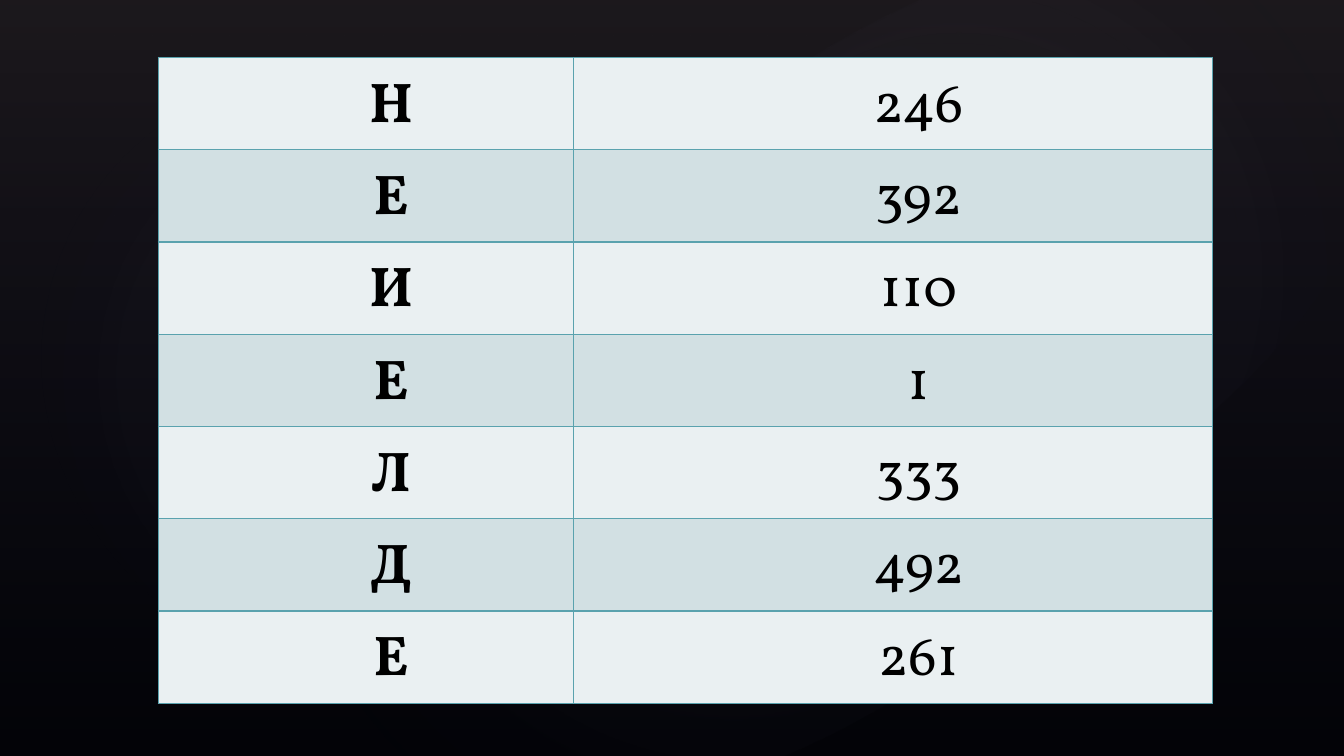
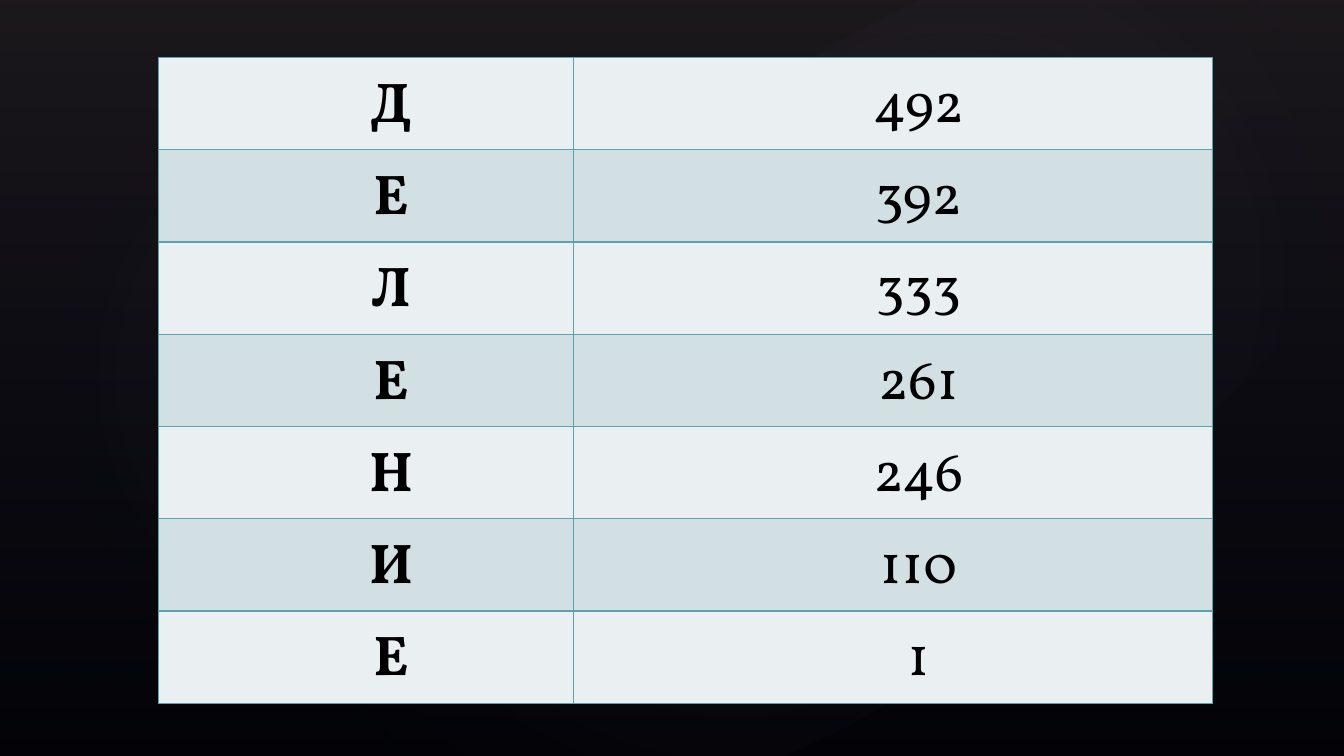
import pptx
import pptx.dml.color
import pptx.enum.shapes
import pptx.enum.text
import pptx.oxml
import pptx.oxml.ns
import pptx.util

Inches = pptx.util.Inches
Pt = pptx.util.Pt

FONT = "Vollkorn"
BLACK = "000000"
BORDER = "5AA2AE"
ROW_FILLS = ("EAF0F2", "D2E0E3")
NAVY = "242852"
WARM_GREY = "504652"
GLOW = "C4BCC6"

TABLE_BOX = (1.57, 0.57, 10.46, 6.41)
LETTER_WIDTH = 4.12

# left, top, width, height, rotation, opacity of the centre in percent
GLOWS = [
    (2, 1.14, 10.56, 6.24, 328.7, 7),
    (0.61, 0.46, 6.06, 6.53, 294.3, 8),
    (4.78, 0.13, 9.45, 5.2, 328.7, 8),
]

SLIDES = [
    [("Н", "246"), ("Е", "392"), ("И", "110"), ("Е", "1"),
     ("Л", "333"), ("Д", "492"), ("Е", "261")],
    [("Д", "492"), ("Е", "392"), ("Л", "333"), ("Е", "261"),
     ("Н", "246"), ("И", "110"), ("Е", "1")],
]


def color(value):
    return pptx.dml.color.RGBColor.from_string(value)


def gradient_fill(shape, stops, direction):
    """Fill with stops of (position, colour, opacity), all in percent."""
    stop_xml = "".join(
        f'<a:gs pos="{position * 1000}"><a:srgbClr val="{value}">'
        f'<a:alpha val="{opacity * 1000}"/></a:srgbClr></a:gs>'
        for position, value, opacity in stops)
    gradient = pptx.oxml.parse_xml(
        f'<a:gradFill {pptx.oxml.ns.nsdecls("a")} rotWithShape="1">'
        f'<a:gsLst>{stop_xml}</a:gsLst>{direction}</a:gradFill>')
    shape.fill.background()
    properties = shape.element.spPr
    properties.replace(properties.find(pptx.oxml.ns.qn("a:noFill")), gradient)


def add_gradient_shape(slide, kind, box, stops, direction):
    shape = slide.shapes.add_shape(kind, *map(Inches, box))
    shape.shadow.inherit = False
    gradient_fill(shape, stops, direction)
    shape.line.fill.background()
    return shape


def build_backdrop(presentation, slide, layout):
    """Draw the shading on the slide, then move it to the back of its layout."""
    layout.background.fill.solid()
    layout.background.fill.fore_color.rgb = color(BLACK)
    kinds = pptx.enum.shapes.MSO_SHAPE
    page = (0, 0, presentation.slide_width.inches, presentation.slide_height.inches)
    shapes = [add_gradient_shape(
        slide, kinds.RECTANGLE, page,
        [(0, WARM_GREY, 36), (100, NAVY, 10)], '<a:lin ang="5400000" scaled="0"/>')]
    center = ('<a:path path="circle">'
              '<a:fillToRect l="50000" t="50000" r="50000" b="50000"/></a:path>')
    for *box, rotation, opacity in GLOWS:
        glow = add_gradient_shape(slide, kinds.OVAL, box,
                                  [(0, GLOW, opacity), (58, NAVY, 0), (100, NAVY, 0)], center)
        glow.rotation = rotation
        shapes.append(glow)
    for index, shape in enumerate(shapes, start=2):
        layout.shapes.element.insert(index, shape.element)


def set_borders(cell):
    properties = cell._tc.get_or_add_tcPr()
    for index, side in enumerate("LRTB"):
        properties.insert(index, pptx.oxml.parse_xml(
            f'<a:ln{side} {pptx.oxml.ns.nsdecls("a")} w="{Pt(1)}"><a:solidFill>'
            f'<a:srgbClr val="{BORDER}"/></a:solidFill></a:ln{side}>'))


def format_cell(cell, text, fill, bold):
    cell.fill.solid()
    cell.fill.fore_color.rgb = color(fill)
    set_borders(cell)
    cell.margin_left = cell.margin_right = Inches(0.07)
    cell.margin_top = cell.margin_bottom = 0
    cell.text_frame.text = text
    paragraph = cell.text_frame.paragraphs[0]
    paragraph.alignment = pptx.enum.text.PP_ALIGN.CENTER
    paragraph.line_spacing = 1.15
    properties = paragraph._p.get_or_add_pPr()
    properties.set("marL", str(Inches(0.5)))
    properties.set("indent", "0")
    font = paragraph.runs[0].font
    font.name = FONT
    font.size = Pt(40)
    font.bold = bold
    font.color.rgb = color(BLACK)


def add_letter_table(slide, box, rows):
    left, top, width, height = box
    table = slide.shapes.add_table(len(rows), 2, *map(Inches, box)).table
    table.first_row = table.horz_banding = False
    table.columns[0].width = Inches(LETTER_WIDTH)
    table.columns[1].width = Inches(width - LETTER_WIDTH)
    for index, (letter, number) in enumerate(rows):
        table.rows[index].height = Inches(height / len(rows))
        fill = ROW_FILLS[index % 2]
        format_cell(table.cell(index, 0), letter, fill, bold=True)
        format_cell(table.cell(index, 1), number, fill, bold=False)


def main():
    presentation = pptx.Presentation()
    presentation.slide_width = Inches(13.33)
    presentation.slide_height = Inches(7.5)
    layout = presentation.slide_layouts.get_by_name("Blank")
    slides = [presentation.slides.add_slide(layout) for _ in SLIDES]
    build_backdrop(presentation, slides[0], layout)
    for slide, rows in zip(slides, SLIDES):
        add_letter_table(slide, TABLE_BOX, rows)
    presentation.save("out.pptx")


if __name__ == "__main__":
    main()
